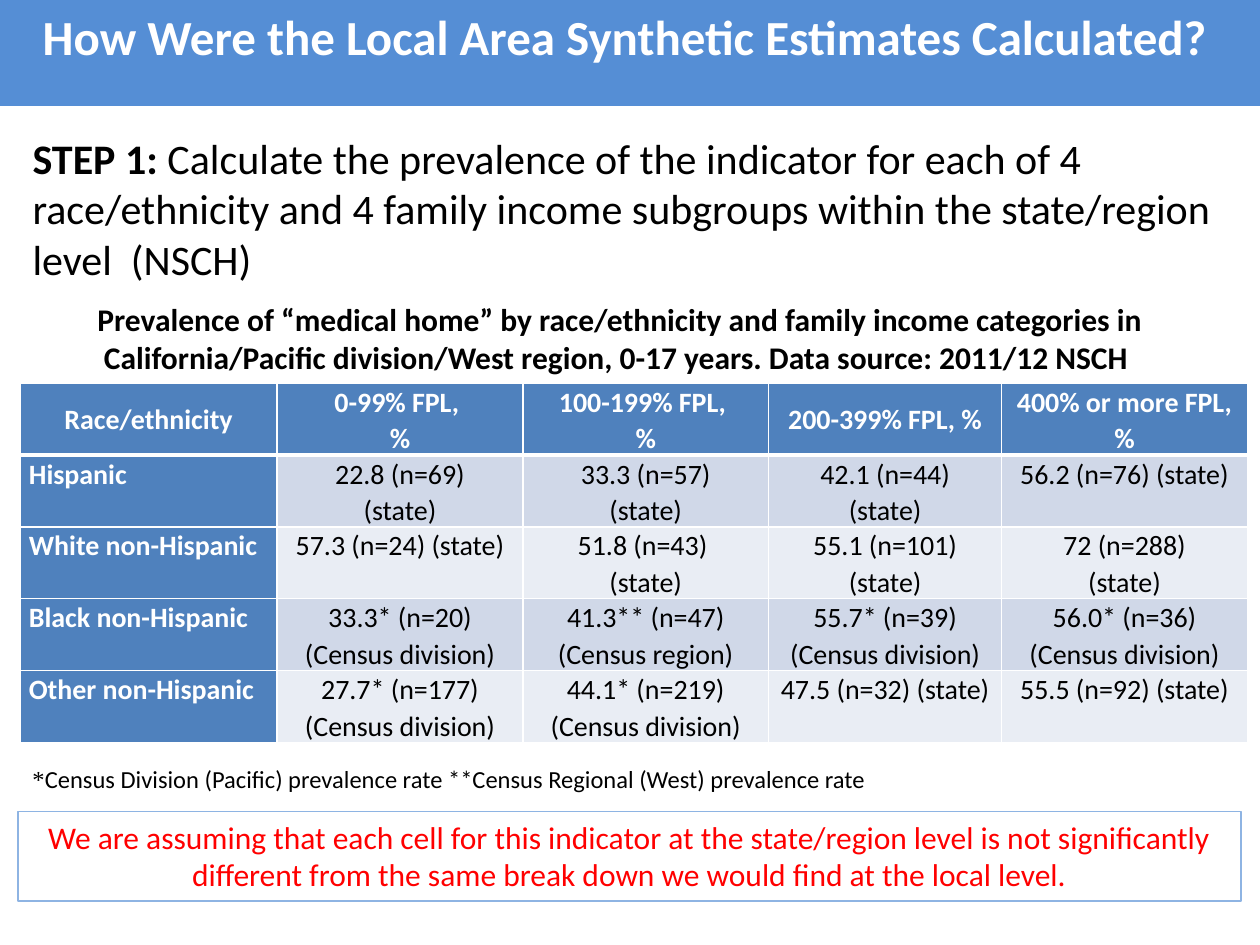
import pptx
import pptx.dml.color
import pptx.enum.text
import pptx.oxml
import pptx.oxml.ns
import pptx.util

Inches = pptx.util.Inches
Pt = pptx.util.Pt
RGBColor = pptx.dml.color.RGBColor
PP_ALIGN = pptx.enum.text.PP_ALIGN
MSO_ANCHOR = pptx.enum.text.MSO_ANCHOR

WHITE = RGBColor(0xFF, 0xFF, 0xFF)
BLACK = RGBColor(0, 0, 0)
RED = RGBColor(0xFF, 0, 0)
BANNER_BLUE = RGBColor(0x55, 0x8E, 0xD5)
OUTLINE_BLUE = RGBColor(0x8E, 0xB4, 0xE3)
HEADER_BLUE = RGBColor(0x4F, 0x81, 0xBD)
BANDS = RGBColor(0xD0, 0xD8, 0xE8), RGBColor(0xE9, 0xED, 0xF4)

CELL_FORMAT = {"margin_left": Inches(0.07), "margin_right": Inches(0.07),
               "margin_top": 0, "margin_bottom": 0}
COLUMN_WIDTHS = 2.04, 1.95, 1.95, 1.85, 1.95
ROW_HEIGHT = 0.57
PREVALENCE = [
    ["Race/ethnicity", "0-99% FPL, \n%", "100-199% FPL, \n%", "200-399% FPL, %",
     "400% or more FPL, %"],
    ["Hispanic", "22.8 (n=69)\n(state)", "33.3 (n=57)\n(state)",
     "42.1 (n=44)\n(state)", "56.2 (n=76) (state)"],
    ["White non-Hispanic", "57.3 (n=24) (state)", "51.8 (n=43) \n(state)",
     "55.1 (n=101)\n(state)", "72 (n=288)\n(state)"],
    ["Black non-Hispanic", "33.3* (n=20) (Census division)",
     "41.3** (n=47) (Census region)", "55.7* (n=39)\n(Census division)",
     "56.0* (n=36) (Census division)"],
    ["Other non-Hispanic", "27.7* (n=177) (Census division)",
     "44.1* (n=219) (Census division)", "47.5 (n=32) (state)",
     "55.5 (n=92) (state)"],
]


def apply_format(target, values):
    """Set each named attribute of the target."""
    for name, value in values.items():
        setattr(target, name, value)


def add_run(paragraph, wording, size, color=BLACK, bold=False, font="Calibri"):
    """Append one formatted run to a paragraph."""
    run = paragraph.add_run()
    run.text = wording
    apply_format(run.font, {"name": font, "size": Pt(size), "bold": bold})
    run.font.color.rgb = color


def add_text(slide, place, align, anchor=MSO_ANCHOR.TOP):
    """Add a wrapping text box and return its first paragraph."""
    frame = slide.shapes.add_textbox(*map(Inches, place)).text_frame
    apply_format(frame, {"word_wrap": True, "vertical_anchor": anchor})
    frame.paragraphs[0].alignment = align
    return frame.paragraphs[0]


def add_panel(slide, place, wording, size, color, bold=False, fill=None, outline=None):
    """Add a rectangle with centred text starting at its top."""
    panel = slide.shapes.add_shape(pptx.enum.shapes.MSO_SHAPE.RECTANGLE, *map(Inches, place))
    panel.shadow.inherit = False
    if fill:
        panel.fill.solid()
        panel.fill.fore_color.rgb = fill
    else:
        panel.fill.background()
    if outline:
        panel.line.color.rgb = outline
        panel.line.width = Pt(1)
    else:
        panel.line.fill.background()
    apply_format(panel.text_frame, {"word_wrap": True, "vertical_anchor": MSO_ANCHOR.TOP})
    paragraph = panel.text_frame.paragraphs[0]
    paragraph.alignment = PP_ALIGN.CENTER
    add_run(paragraph, wording, size, color, bold)


def add_borders(cell, top, bottom):
    """Draw white cell borders with the given top and bottom widths."""
    properties = cell._tc.get_or_add_tcPr()
    for side, width in {"L": 1, "R": 1, "T": top, "B": bottom}.items():
        properties.append(pptx.oxml.parse_xml(
            f'<a:ln{side} {pptx.oxml.ns.nsdecls("a")} w="{Pt(width)}"><a:solidFill>'
            f'<a:srgbClr val="{WHITE}"/></a:solidFill></a:ln{side}>'))


def fill_cell(cell, wording, row, column):
    """Write and style one cell according to its row and column."""
    heading = row == 0 or column == 0
    add_borders(cell, top=3 if row == 1 else 1, bottom=3 if row == 0 else 1)
    cell.fill.solid()
    cell.fill.fore_color.rgb = HEADER_BLUE if heading else BANDS[(row - 1) % 2]
    apply_format(cell, CELL_FORMAT)
    cell.vertical_anchor = MSO_ANCHOR.TOP if row else MSO_ANCHOR.MIDDLE
    align = PP_ALIGN.JUSTIFY if row and column == 0 else PP_ALIGN.CENTER
    for index, line in enumerate(wording.split("\n")):
        frame = cell.text_frame
        paragraph = frame.add_paragraph() if index else frame.paragraphs[0]
        apply_format(paragraph, {"alignment": align, "line_spacing": 1.07})
        add_run(paragraph, line, 16, WHITE if heading else BLACK, heading)


def add_prevalence_table(slide):
    """Add the table of prevalence by race/ethnicity and income."""
    place = 0.16, 3.04, sum(COLUMN_WIDTHS), ROW_HEIGHT * len(PREVALENCE)
    table = slide.shapes.add_table(
        len(PREVALENCE), len(COLUMN_WIDTHS), *map(Inches, place)).table
    for column, width in zip(table.columns, COLUMN_WIDTHS):
        column.width = Inches(width)
    for row, wordings in enumerate(PREVALENCE):
        for column, wording in enumerate(wordings):
            fill_cell(table.cell(row, column), wording, row, column)


def main():
    """Build the slide and save it."""
    deck = pptx.Presentation()
    apply_format(deck, {"slide_width": Inches(10), "slide_height": Inches(7.5)})
    slide = deck.slides.add_slide(deck.slide_layouts[6])

    add_panel(slide, (0, 0, 10, 0.84),
              "How Were the Local Area Synthetic Estimates Calculated? ",
              28, WHITE, bold=True, fill=BANNER_BLUE)

    step = add_text(slide, (0.16, 1, 9.69, 1.31), PP_ALIGN.LEFT)
    apply_format(step, {"space_before": Pt(12), "space_after": Pt(6)})
    add_run(step, "STEP 1: ", 24, bold=True)
    add_run(step, "Calculate the prevalence of the indicator for each of 4 race/ethnicity "
                  "and 4 family income subgroups within the state/region level  (NSCH)", 24)

    add_prevalence_table(slide)

    footnote = add_text(slide, (0.16, 6.01, 8.14, 0.34), PP_ALIGN.JUSTIFY, MSO_ANCHOR.MIDDLE)
    add_run(footnote, "*", 14, font="Times New Roman")
    add_run(footnote, "Census Division (Pacific) prevalence rate "
                      "**Census Regional (West) prevalence rate", 14)

    caption = add_text(slide, (0.43, 2.33, 8.98, 0.71), PP_ALIGN.CENTER)
    add_run(caption, "Prevalence of “medical home” by race/ethnicity and family income "
                     "categories in California/Pacific division/West region, 0-17 years. "
                     "Data source: 2011/12 NSCH ", 18, bold=True)

    add_panel(slide, (0.14, 6.44, 9.71, 0.71),
              "We are assuming that each cell for this indicator at the state/region level "
              "is not significantly different from the same break down we would find at the "
              "local level.", 18, RED, outline=OUTLINE_BLUE)

    deck.save("out.pptx")


if __name__ == "__main__":
    main()
